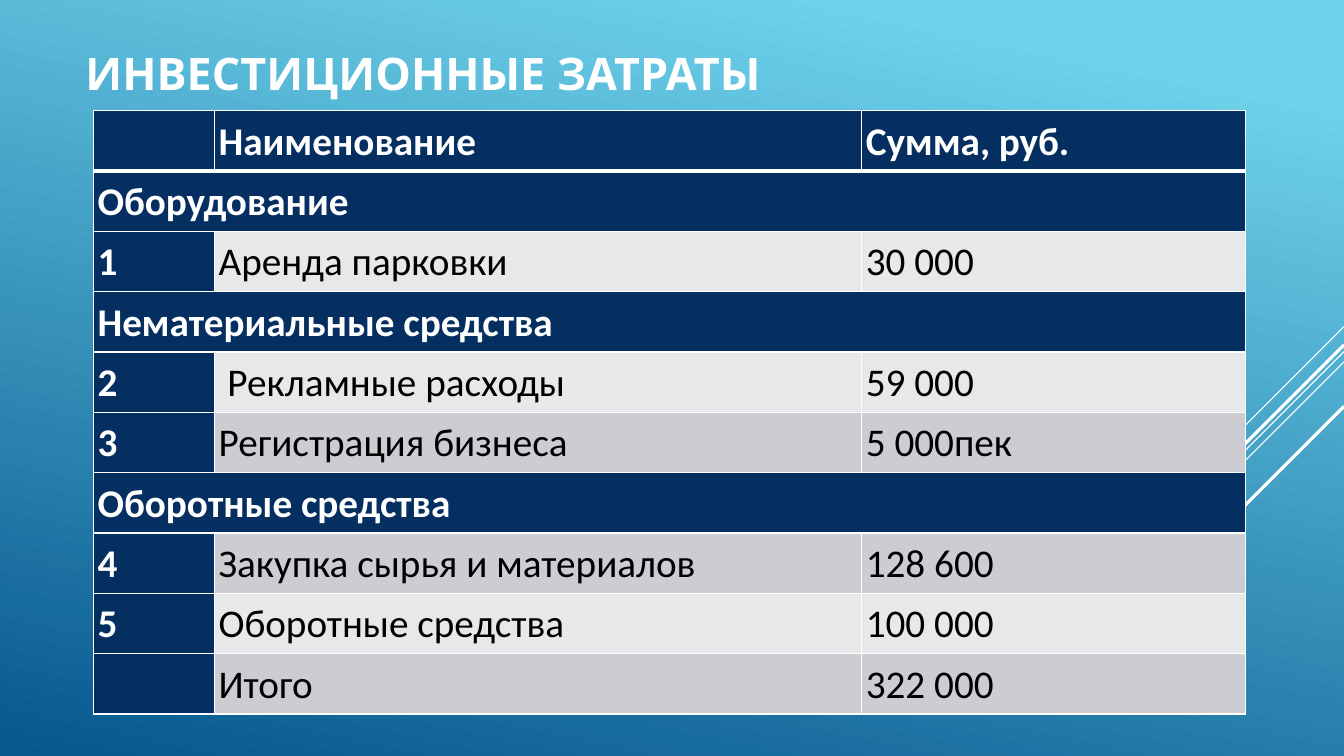
import pptx
import pptx.chart
import pptx.dml.color
import pptx.enum.shapes
import pptx.enum.text
import pptx.oxml
import pptx.oxml.ns
import pptx.util
import lxml.etree

Cm = pptx.util.Cm
Pt = pptx.util.Pt

COLORS = {
    "sky": "6ED2EB",
    "sea": "06588E",
    "white": "FFFFFF",
    "black": "000000",
    "navy": "052F61",
    "light": "E7E8EA",
    "grey": "CCCDD2",
}

STRIPES = [
    (8.23, 2.54, 0.75),
    (8.86, 8.28, 0.75),
    (9.12, 5.27, 0.75),
    (8.69, 4.85, 2.25),
    (10.24, 3.53, 2.25),
]

COSTS = [
    ("", "Наименование", "Сумма, руб."),
    ("Оборудование",),
    ("1", "Аренда парковки", "30 000"),
    ("Нематериальные средства",),
    ("2", " Рекламные расходы", "59 000"),
    ("3", "Регистрация бизнеса", "5 000пек"),
    ("Оборотные средства",),
    ("4", "Закупка сырья и материалов", "128 600"),
    ("5", "Оборотные средства", "100 000"),
    ("", "Итого", "322 000"),
]


class CostPage:
    """Draws the elements of the investment cost page in one style."""

    def __init__(self, deck):
        self.page = deck.slides.add_slide(deck.slide_layouts[5])
        self.width = deck.slide_width

    def color(self, name):
        return pptx.dml.color.RGBColor.from_string(COLORS[name])

    def background(self, start, end, angle):
        fill = self.page.background.fill
        fill.gradient()
        fill.gradient_angle = angle
        for stop, name, position in zip(fill.gradient_stops, (start, end), (0.1, 1)):
            stop.color.rgb = self.color(name)
            stop.position = position

    def font(self, para, face, size, color, bold):
        para.font.name = face
        para.font.size = Pt(size)
        para.font.bold = bold
        para.font.color.rgb = self.color(color)

    def title(self, text, left, top, width, height):
        box = self.page.shapes.title
        box.left, box.top = Cm(left), Cm(top)
        box.width, box.height = Cm(width), Cm(height)
        frame = box.text_frame
        frame.text = text
        frame.auto_size = pptx.enum.text.MSO_AUTO_SIZE.NONE
        frame.vertical_anchor = pptx.enum.text.MSO_ANCHOR.MIDDLE
        para = frame.paragraphs[0]
        para.alignment = pptx.enum.text.PP_ALIGN.LEFT
        self.font(para, "League Spartan", 32, "white", True)

    def stripe(self, top, reach, weight):
        line = self.page.shapes.add_connector(
            pptx.enum.shapes.MSO_CONNECTOR.STRAIGHT,
            self.width, Cm(top), self.width - Cm(reach), Cm(top + reach))
        line.line.color.rgb = self.color("white")
        line.line.width = Pt(weight)
        properties = line._element.spPr
        lxml.etree.SubElement(properties, pptx.oxml.ns.qn("a:effectLst"))

    def borders(self, cell, weights):
        properties = cell._tc.get_or_add_tcPr()
        for side, weight in weights.items():
            edge = lxml.etree.SubElement(
                properties, pptx.oxml.ns.qn("a:ln" + side), w=str(Pt(weight)))
            fill = lxml.etree.SubElement(edge, pptx.oxml.ns.qn("a:solidFill"))
            lxml.etree.SubElement(
                fill, pptx.oxml.ns.qn("a:srgbClr"), val=COLORS["white"])

    def cell(self, cell, text, fill, weights):
        self.borders(cell, weights)
        cell.fill.solid()
        cell.fill.fore_color.rgb = self.color(fill)
        cell.margin_left = cell.margin_right = Cm(0.1)
        cell.margin_top = cell.margin_bottom = Cm(0.1)
        cell.text = text
        para = cell.text_frame.paragraphs[0]
        para.line_spacing = 1.07
        para.space_after = Pt(8)
        dark = fill == "navy"
        self.font(para, "Calibri", 28, "white" if dark else "black", dark)

    def table(self, rows, left, top, widths, row_height):
        table = self.page.shapes.add_table(
            len(rows), len(widths), Cm(left), Cm(top),
            Cm(sum(widths)), Cm(row_height * len(rows))).table
        table.first_row = table.horz_banding = False
        for column, width in zip(table.columns, widths):
            column.width = Cm(width)
        for r, texts in enumerate(rows):
            table.rows[r].height = Cm(row_height)
            section = len(texts) == 1
            weights = {"L": 1, "R": 1, "T": 3 if r == 1 else 1, "B": 3 if r == 0 else 1}
            for c in range(len(widths)):
                heading = r == 0 or c == 0 or section
                band = "grey" if r % 2 else "light"
                text = texts[c] if c < len(texts) else ""
                self.cell(table.cell(r, c), text, "navy" if heading else band, weights)
            if section:
                table.cell(r, 0).merge(table.cell(r, len(widths) - 1))


def main():
    deck = pptx.Presentation()
    deck.slide_width, deck.slide_height = Cm(33.87), Cm(19.05)
    costs = CostPage(deck)
    costs.background("sky", "sea", 258)
    for stripe in STRIPES:
        costs.stripe(*stripe)
    costs.title("ИНВЕСТИЦИОННЫЕ ЗАТРАТЫ", 1.9, 0.79, 27.94, 2.06)
    costs.table(COSTS, 2.36, 2.79, (3.05, 16.31, 9.67), 1.52)
    deck.save("out.pptx")


if __name__ == "__main__":
    main()
